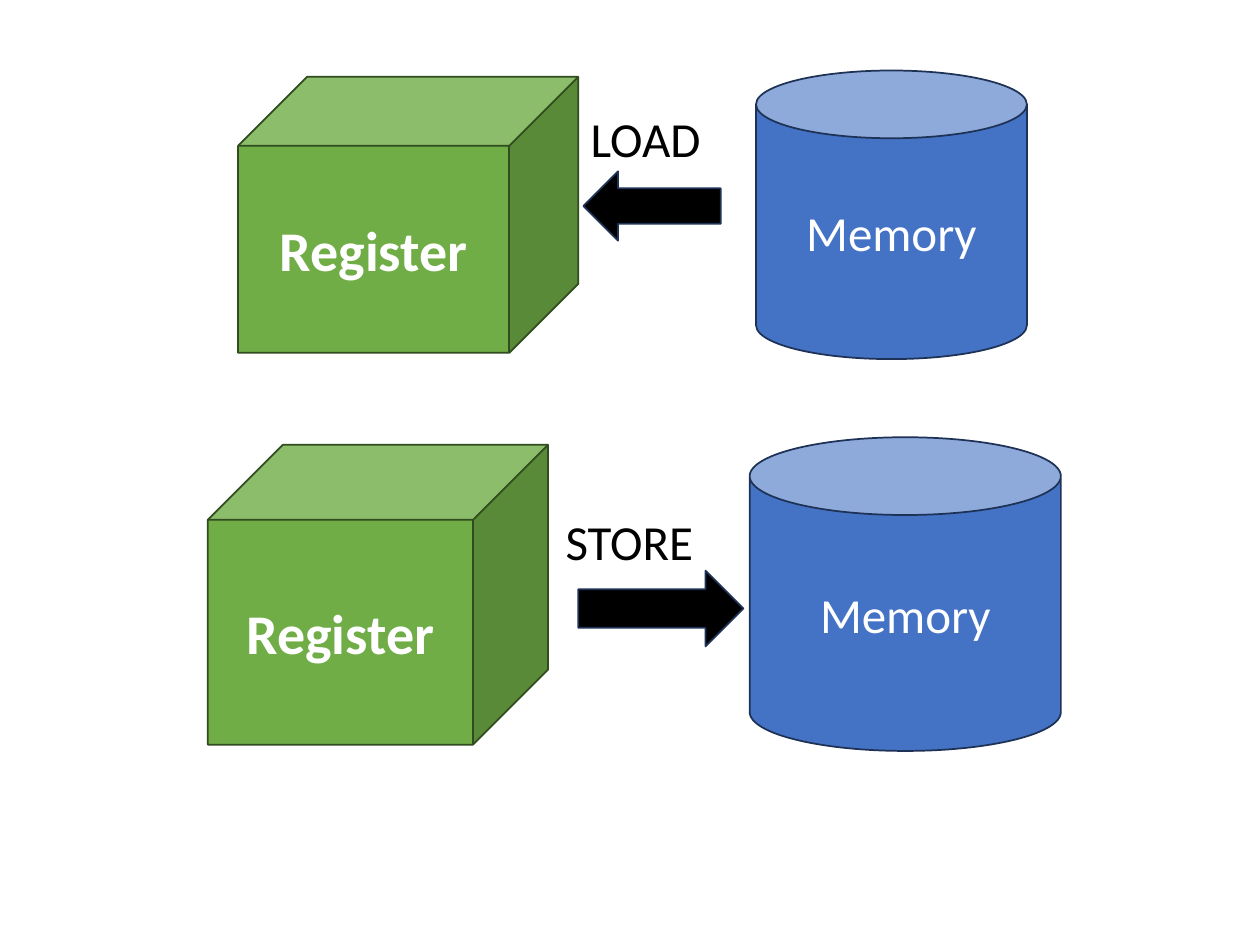
from pptx import Presentation
from pptx.dml.color import RGBColor
from pptx.enum.shapes import MSO_SHAPE as SHAPE
from pptx.enum.text import MSO_ANCHOR as ANCHOR, MSO_AUTO_SIZE as AUTO_SIZE, PP_ALIGN as ALIGN
from pptx.util import Inches, Pt

COLORS = {
    "register": "70AD47",
    "register_edge": "314C1F",
    "memory": "4472C4",
    "memory_edge": "1E3256",
    "arrow": "000000",
    "label": "000000",
    "on_shape": "FFFFFF",
}


def add_block(kind, box, fill, edge):
    block = slide.shapes.add_shape(kind, *map(Inches, box))
    block.shadow.inherit = False
    block.fill.solid()
    block.fill.fore_color.rgb = RGBColor.from_string(COLORS[fill])
    block.line.color.rgb = RGBColor.from_string(COLORS[edge])
    block.line.width = Pt(1)
    return block


def write(frame, words, color, align, size=28, bold=False):
    paragraph = frame.paragraphs[0]
    paragraph.alignment = align
    run = paragraph.add_run()
    run.text = words
    run.font.color.rgb = RGBColor.from_string(COLORS[color])
    for name, value in {"name": "Calibri", "size": Pt(size), "bold": bold}.items():
        setattr(run.font, name, value)


prs = Presentation()
prs.slide_width, prs.slide_height = Inches(10), Inches(7.5)
slide = prs.slides.add_slide(prs.slide_layouts[6])

transfers = [
    {"name": "LOAD", "turn": 180,
     "register": (1.89, 0.61, 2.7, 2.19), "memory": (6, 0.56, 2.15, 2.29),
     "arrow": (4.63, 1.36, 1.09, 0.55), "label": (4.59, 0.81, 1.37, 0.57)},
    {"name": "STORE", "turn": 0,
     "register": (1.65, 3.53, 2.7, 2.38), "memory": (5.95, 3.47, 2.47, 2.49),
     "arrow": (4.59, 4.53, 1.31, 0.6), "label": (4.39, 4.01, 1.78, 0.57)},
]

for transfer in transfers:
    register = add_block(SHAPE.CUBE, transfer["register"], "register", "register_edge")
    write(register.text_frame, "Register", "on_shape", ALIGN.CENTER, size=32, bold=True)

    memory = add_block(SHAPE.CAN, transfer["memory"], "memory", "memory_edge")
    write(memory.text_frame, "Memory", "on_shape", ALIGN.CENTER)

    for block in (register, memory):
        block.text_frame.vertical_anchor = ANCHOR.MIDDLE

    arrow = add_block(SHAPE.RIGHT_ARROW, transfer["arrow"], "arrow", "memory_edge")
    arrow.adjustments[0] = 0.51
    arrow.rotation = transfer["turn"]

    label = slide.shapes.add_textbox(*map(Inches, transfer["label"])).text_frame
    label.word_wrap = True
    label.auto_size = AUTO_SIZE.SHAPE_TO_FIT_TEXT
    write(label, transfer["name"], "label", ALIGN.LEFT)

prs.save("out.pptx")
